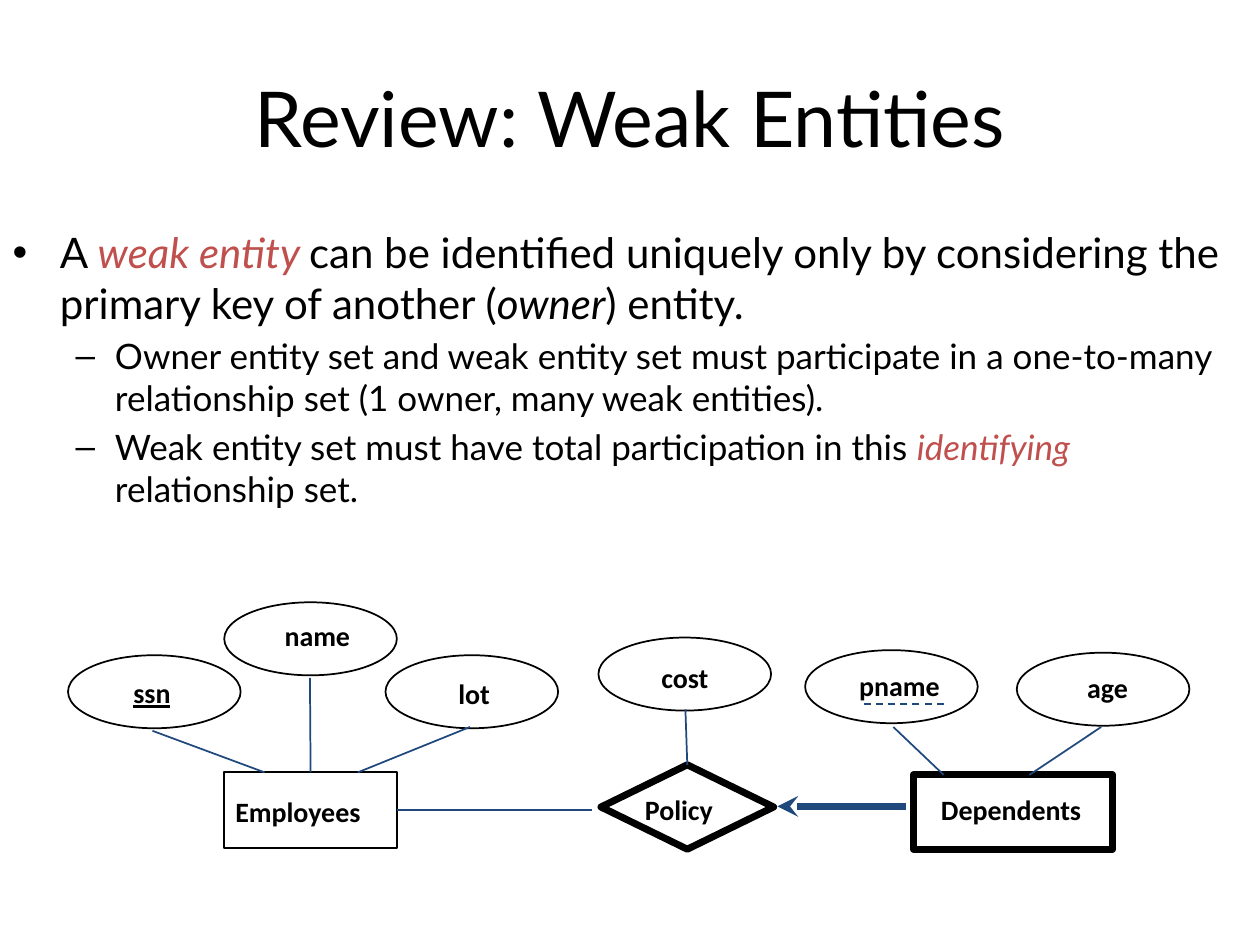
from lxml import etree
from pptx import Presentation
from pptx.dml.color import RGBColor
from pptx.enum.dml import MSO_LINE
from pptx.enum.shapes import MSO_CONNECTOR, MSO_SHAPE
from pptx.enum.text import MSO_ANCHOR, MSO_AUTO_SIZE, PP_ALIGN
from pptx.oxml.ns import qn
from pptx.util import Pt

PX = 9144
BLACK, RED, BLUE = "000000", "C0504D", "1F497D"
OVAL, RECTANGLE, DIAMOND = MSO_SHAPE.OVAL, MSO_SHAPE.RECTANGLE, MSO_SHAPE.DIAMOND
STRAIGHT, DASH = MSO_CONNECTOR.STRAIGHT, MSO_LINE.DASH
CENTER, MIDDLE = PP_ALIGN.CENTER, MSO_ANCHOR.MIDDLE
NO_FIT, GROW = MSO_AUTO_SIZE.NONE, MSO_AUTO_SIZE.SHAPE_TO_FIT_TEXT
TOP, RIGHT = 0, 3

BULLETS = [
    (0, 24, [("A ", False), ("weak entity ", RED),
             ("can be identified uniquely only by considering the primary key of another (", False),
             ("owner", BLACK), (") entity.", False)]),
    (1, 20, [("Owner entity set and weak entity set must participate in a one-to-many "
              "relationship set (1 owner, many weak entities).", False)]),
    (1, 20, [("Weak entity set must have total participation in this ", False),
             ("identifying ", RED), ("relationship set.", False)]),
]
ATTRIBUTES = [
    ("ssn", (0, 42), (42, 53, 58)),
    ("name", (124, 0), (162, 8, 78)),
    ("lot", (252, 42), (300, 54, 47)),
    ("cost", (421, 28), (461, 41, 65)),
    ("pname", (585, 38), (618, 48, 91)),
    ("age", (753, 40), (799, 49, 58)),
]
ENTITIES = [
    ("Employees", RECTANGLE, (124, 135, 137, 60), 1, (123, 148, 137)),
    ("Policy", DIAMOND, (423, 129, 137, 67), 4, (448, 146, 85)),
    ("Dependents", RECTANGLE, (671, 137, 158, 59), 4, (683, 146, 147)),
]
LINKS = [
    ((67, 102), (156, 135)),
    ((319, 99), (230, 135)),
    ((655, 99), (695, 137)),
    ((820, 99), (763, 137)),
]


def color(value):
    """Turn a hex string into a colour."""
    return RGBColor.from_string(value)


def place(box, left, top, width, height):
    """Move and size an object in px."""
    box.left, box.top = left * PX, top * PX
    box.width, box.height = width * PX, height * PX


def add_span(para, text, size, font, ink=BLACK):
    """Add one formatted run to a paragraph."""
    span = para.add_run()
    span.text = text
    span.font.size, span.font.name = Pt(size), font
    span.font.color.rgb = color(ink)
    return span


def add_heading(page, area):
    """Fill the title placeholder."""
    box = page.shapes.title
    place(box, *area)
    box.text_frame.vertical_anchor = MIDDLE
    para = box.text_frame.paragraphs[0]
    para.alignment = CENTER
    add_span(para, "Review: Weak Entities", 44, "Lato")


def add_bullets(page, area):
    """Fill the body placeholder with the two-level list."""
    box = page.placeholders[1]
    place(box, *area)
    frame = box.text_frame
    frame.auto_size = NO_FIT
    for index, (level, size, parts) in enumerate(BULLETS):
        para = frame.add_paragraph() if index else frame.paragraphs[0]
        para.level = level
        for text, accent in parts:
            add_span(para, text, size, "Lato", accent or BLACK).font.italic = bool(accent)


def add_outline(page, kind, area, weight):
    """Draw an unfilled black shape."""
    shape = page.shapes.add_shape(kind, *(value * PX for value in area))
    shape.shadow.inherit = False
    shape.fill.background()
    shape.line.color.rgb = color(BLACK)
    shape.line.width = Pt(weight)
    return shape


def add_label(page, text, left, top, width):
    """Write a bold diagram label."""
    box = page.shapes.add_textbox(left * PX, top * PX, width * PX, 36 * PX)
    box.text_frame.word_wrap = False
    box.text_frame.auto_size = GROW
    span = add_span(box.text_frame.paragraphs[0], text, 16, "Calibri")
    span.font.bold = True
    if text == "ssn":
        span.font.underline = True


def add_link(page, start, end, weight=1):
    """Draw a straight blue connector without a shadow."""
    link = page.shapes.add_connector(STRAIGHT, *(value * PX for value in (*start, *end)))
    link.line.color.rgb = color(BLUE)
    link.line.width = Pt(weight)
    etree.SubElement(link._element.spPr, qn("a:effectLst"))
    return link


def add_diagram(page, left, top):
    """Draw the entity-relationship diagram from its top left corner."""
    def at(x, y):
        return left + x, top + y

    for text, corner, (x, y, width) in ATTRIBUTES:
        add_outline(page, OVAL, (*at(*corner), 137, 58), 1)
        add_label(page, text, *at(x, y), width)
    entities = {}
    for text, kind, (x, y, width, height), weight, label in ENTITIES:
        entities[text] = add_outline(page, kind, (*at(x, y), width, height), weight)
        add_label(page, text, *at(*label[:2]), label[2])

    for start, end in LINKS:
        add_link(page, at(*start), at(*end))
    add_link(page, at(192, 60), at(192, 135)).end_connect(entities["Employees"], TOP)
    add_link(page, at(490, 85), at(491, 129)).end_connect(entities["Policy"], TOP)
    add_link(page, at(261, 165), at(416, 165)).begin_connect(entities["Employees"], RIGHT)
    add_link(page, at(695, 81), at(628, 81)).line.dash_style = DASH
    arrow = add_link(page, at(563, 162), at(665, 162), 4)
    etree.SubElement(arrow.line._get_or_add_ln(), qn("a:headEnd"), type="stealth")


def main():
    """Build and save the deck."""
    deck = Presentation()
    deck.slide_width, deck.slide_height = 1000 * PX, 750 * PX
    page = deck.slides.add_slide(deck.slide_layouts[1])
    add_heading(page, (50, 30, 900, 125))
    add_bullets(page, (0, 175, 992, 542))
    add_diagram(page, 54, 478)
    deck.save("out.pptx")


if __name__ == "__main__":
    main()
